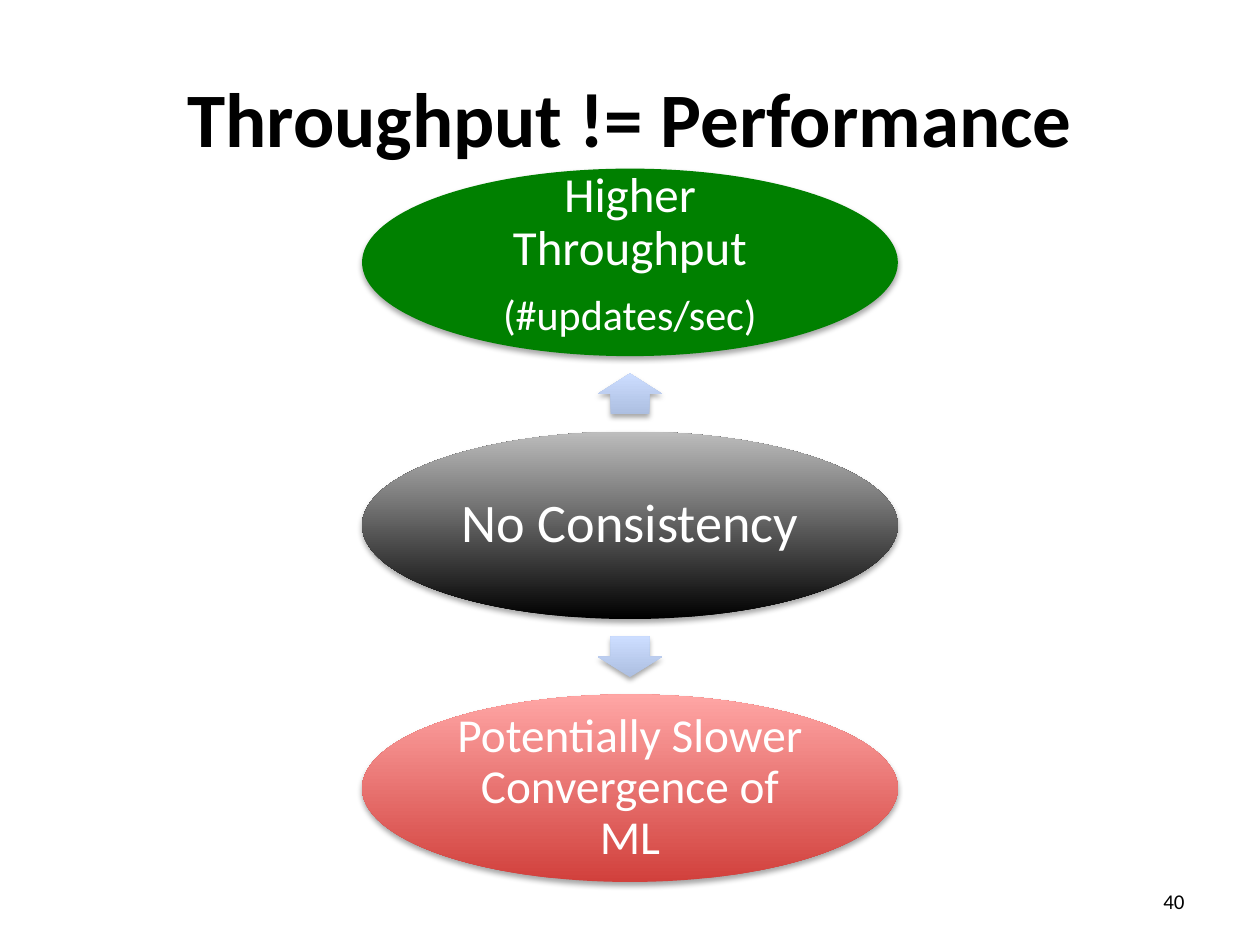
from dataclasses import dataclass

from lxml import etree
from pptx import Presentation
from pptx.dml.color import RGBColor
from pptx.enum.shapes import MSO_SHAPE
from pptx.enum.text import MSO_ANCHOR, PP_ALIGN
from pptx.oxml.ns import qn
from pptx.util import Cm, Pt

OVAL, UP, DOWN = MSO_SHAPE.OVAL, MSO_SHAPE.UP_ARROW, MSO_SHAPE.DOWN_ARROW
CENTER, RIGHT = PP_ALIGN.CENTER, PP_ALIGN.RIGHT
MIDDLE = MSO_ANCHOR.MIDDLE

FONT = "Calibri"
BLACK = RGBColor(0x00, 0x00, 0x00)
WHITE = RGBColor(0xFF, 0xFF, 0xFF)
GRAY = RGBColor(0xBD, 0xBD, 0xBD)
GREEN = RGBColor(0x00, 0x80, 0x00)
RED = RGBColor(0xD1, 0x40, 0x3C)
PINK = RGBColor(0xFF, 0xA6, 0xA5)
BLUE = RGBColor(0xAD, 0xBF, 0xE1)
PALE_BLUE = RGBColor(0xCC, 0xDD, 0xFF)

# Lengths in centimetres
SLIDE_W, SLIDE_H = 25.4, 19.05
OVAL_W, OVAL_H = 10.8, 3.78
ARROW_W, ARROW_H = 1.3, 0.82
FIRST_TOP, PITCH = 3.4, 5.3


@dataclass
class Line:
    text: str
    size: int


@dataclass
class Stage:
    lines: list[Line]
    colors: list[RGBColor]  # bottom to top; a single one is a solid fill
    bottom_inset: float = 0.1


STAGES = [
    Stage([Line("Higher Throughput", 28), Line("(#updates/sec)", 24)], [GREEN], 0.4),
    Stage([Line("No Consistency", 31)], [BLACK, GRAY]),
    Stage([Line("Potentially Slower Convergence of ML", 27)], [RED, PINK]),
]


def add_text(p, text: str, *, size: int, color: RGBColor = BLACK,
             bold: bool = False, align: PP_ALIGN = CENTER) -> None:
    p.alignment = align
    r = p.add_run()
    r.text = text
    r.font.name = FONT
    r.font.size = Pt(size)
    r.font.bold = bold
    r.font.color.rgb = color


def add_label(slide, box: tuple[float, ...], text: str, **fmt) -> None:
    tf = slide.shapes.add_textbox(*map(Cm, box)).text_frame
    tf.word_wrap = True
    tf.vertical_anchor = MIDDLE
    add_text(tf.paragraphs[0], text, **fmt)


def add_shadow(sp) -> None:
    """Give the shape a soft shadow that falls straight down."""
    sp.shadow.inherit = False
    effects = sp._element.spPr.find(qn("a:effectLst"))
    shadow = etree.SubElement(effects, qn("a:outerShdw"), blurRad=str(Pt(3.1)),
                              dist=str(Pt(1.8)), dir="5400000", rotWithShape="0")
    color = etree.SubElement(shadow, qn("a:srgbClr"), val=str(BLACK))
    etree.SubElement(color, qn("a:alpha"), val="35000")


def add_centered_shape(slide, kind: MSO_SHAPE, middle: float, width: float,
                       height: float, colors: list[RGBColor]):
    sp = slide.shapes.add_shape(kind, Cm((SLIDE_W - width) / 2),
                                Cm(middle - height / 2), Cm(width), Cm(height))
    if len(colors) == 1:
        sp.fill.solid()
        sp.fill.fore_color.rgb = colors[0]
    else:
        sp.fill.gradient()
        sp.fill.gradient_angle = 90
        for stop, color in zip(sp.fill.gradient_stops, colors):
            stop.color.rgb = color
    sp.line.fill.background()
    add_shadow(sp)
    return sp


def add_stage(slide, stage: Stage, middle: float) -> None:
    sp = add_centered_shape(slide, OVAL, middle, OVAL_W, OVAL_H, stage.colors)
    tf = sp.text_frame
    tf.word_wrap = True
    tf.vertical_anchor = MIDDLE
    tf.margin_left = tf.margin_right = tf.margin_top = Cm(0.1)
    tf.margin_bottom = Cm(stage.bottom_inset)
    for i, line in enumerate(stage.lines):
        p = tf.add_paragraph() if i else tf.paragraphs[0]
        p.line_spacing = 0.9
        p.space_after = Pt(round(0.35 * line.size))
        add_text(p, line.text, size=line.size, color=WHITE)


def main() -> None:
    prs = Presentation()
    prs.slide_width, prs.slide_height = Cm(SLIDE_W), Cm(SLIDE_H)
    slide = prs.slides.add_slide(prs.slide_layouts[6])

    add_label(slide, (1.27, 0.76, 22.86, 3.18), "Throughput != Performance",
              size=44, bold=True)
    first_middle = FIRST_TOP + OVAL_H / 2
    for i, stage in enumerate(STAGES):
        add_stage(slide, stage, first_middle + i * PITCH)
    for i, kind in enumerate((UP, DOWN)):
        sp = add_centered_shape(slide, kind, first_middle + (i + 0.5) * PITCH,
                                ARROW_W, ARROW_H, [BLUE, PALE_BLUE])
        sp.adjustments[0], sp.adjustments[1] = 0.6, 0.5
    add_label(slide, (18.2, 17.65, 5.93, 1.02), "40", size=12, align=RIGHT)

    prs.save("out.pptx")


if __name__ == "__main__":
    main()
